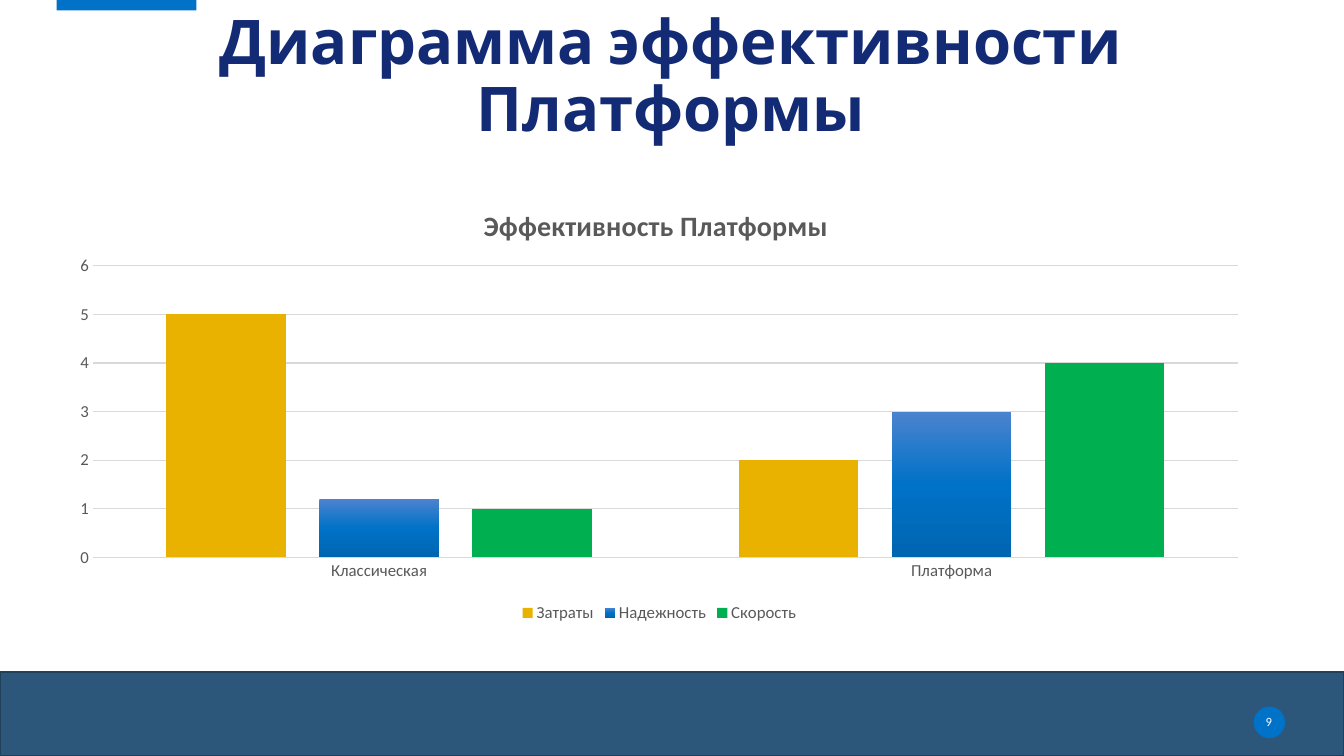
import copy
import dataclasses
import typing

import lxml.etree
import pptx
import pptx.chart.data
import pptx.dml.color
import pptx.enum.chart
import pptx.enum.dml
import pptx.enum.shapes
import pptx.enum.text
import pptx.oxml.ns
import pptx.util

RGB = pptx.dml.color.RGBColor
SHAPE = pptx.enum.shapes.MSO_SHAPE
CHART = pptx.enum.chart
CENTER = pptx.enum.text.PP_ALIGN.CENTER
EMU_PER_PX = 9525

WHITE = RGB(0xFF, 0xFF, 0xFF)
NAVY = RGB(0x13, 0x2A, 0x75)
FOOTER_BLUE = RGB(0x2C, 0x56, 0x7A)
FOOTER_EDGE = RGB(0x21, 0x40, 0x5A)
ACCENT_BLUE = RGB(0x00, 0x72, 0xC7)
LIGHT_BLUE = RGB(0x4B, 0x83, 0xCF)
DEEP_BLUE = RGB(0x00, 0x65, 0xB1)
YELLOW = RGB(0xEA, 0xB2, 0x00)
GREEN = RGB(0x00, 0xB0, 0x50)
TEXT_GRAY = RGB(0x59, 0x59, 0x59)
LINE_GRAY = RGB(0xD9, 0xD9, 0xD9)

Box = tuple[int, int, int, int]


@dataclasses.dataclass(frozen=True)
class Decoration:
    preset: typing.Any
    box: Box
    fill: RGB
    edge: RGB | None = None


@dataclasses.dataclass(frozen=True)
class Measure:
    name: str
    scores: tuple[float, ...]
    colors: tuple[RGB, ...]


DECORATIONS = (
    Decoration(SHAPE.RECTANGLE, (0, 640, 1280, 80), FOOTER_BLUE, FOOTER_EDGE),
    Decoration(SHAPE.RECTANGLE, (54, -2, 133, 12), ACCENT_BLUE),
    Decoration(SHAPE.OVAL, (1194, 673, 30, 30), ACCENT_BLUE),
)
APPROACHES = ("Классическая", "Платформа")
MEASURES = (
    Measure("Затраты", (5, 2), (YELLOW,)),
    Measure("Надежность", (1.2, 3), (LIGHT_BLUE, ACCENT_BLUE, DEEP_BLUE)),
    Measure("Скорость", (1, 4), (GREEN,)),
)
TITLE_FONT = {"name": "Cabin", "size": 44, "bold": True, "color": NAVY}
NUMBER_FONT = {"name": "Calibri", "size": 9, "color": WHITE}
LABEL_FONT = {"name": "Calibri", "size": 12, "bold": False, "color": TEXT_GRAY}
HEADING_FONT = LABEL_FONT | {"size": 20, "bold": True}


def emu(box: Box) -> list[int]:
    return [length * EMU_PER_PX for length in box]


def apply_format(target: typing.Any, values: dict[str, typing.Any]) -> None:
    for attribute, value in values.items():
        setattr(target, attribute, value)


def apply_font(font: typing.Any, values: dict[str, typing.Any]) -> None:
    for attribute, value in values.items():
        if attribute == "color":
            font.color.rgb = value
        else:
            setattr(font, attribute, pptx.util.Pt(value) if attribute == "size" else value)


def apply_line(line: typing.Any, color: RGB, width: float) -> None:
    line.color.rgb = color
    line.width = pptx.util.Pt(width)


def draw_decoration(slide: typing.Any, decoration: Decoration) -> None:
    shape = slide.shapes.add_shape(decoration.preset, *emu(decoration.box))
    shape.shadow.inherit = False
    shape.fill.solid()
    shape.fill.fore_color.rgb = decoration.fill
    if decoration.edge is None:
        shape.line.fill.background()
    else:
        apply_line(shape.line, decoration.edge, 1)


def write_text(frame: typing.Any, text: str, font: dict[str, typing.Any]) -> None:
    apply_format(frame, {
        "word_wrap": True,
        "auto_size": pptx.enum.text.MSO_AUTO_SIZE.NONE,
        "vertical_anchor": pptx.enum.text.MSO_ANCHOR.MIDDLE,
    })
    paragraph = frame.paragraphs[0]
    paragraph.alignment = CENTER
    run = paragraph.add_run()
    run.text = text
    apply_font(run.font, font)


def place_by_fraction(part: typing.Any, index: int, fractions: dict[str, float], inner: bool) -> None:
    qn = pptx.oxml.ns.qn
    for automatic in part.findall(qn("c:layout")):
        part.remove(automatic)
    layout = lxml.etree.Element(qn("c:layout"))
    part.insert(index, layout)
    manual = lxml.etree.SubElement(layout, qn("c:manualLayout"))
    settings = {"layoutTarget": "inner"} if inner else {}
    settings |= {"xMode": "edge", "yMode": "edge"}
    settings |= {key: str(value) for key, value in fractions.items()}
    for tag, value in settings.items():
        lxml.etree.SubElement(manual, qn(f"c:{tag}")).set("val", value)


def fill_columns(columns: typing.Any, colors: tuple[RGB, ...]) -> None:
    columns.invert_if_negative = False
    fill = columns.format.fill
    if len(colors) == 1:
        fill.solid()
        fill.fore_color.rgb = colors[0]
        return
    fill.gradient()
    fill.gradient_angle = 270
    stop_list = columns._element.find(".//" + pptx.oxml.ns.qn("a:gsLst"))
    while len(stop_list) < len(colors):
        stop_list.append(copy.deepcopy(stop_list[0]))
    for index, (stop, color) in enumerate(zip(fill.gradient_stops, colors)):
        stop.position = index / (len(colors) - 1)
        stop.color.rgb = color


def draw_efficiency_chart(slide: typing.Any, box: Box) -> None:
    data = pptx.chart.data.CategoryChartData()
    data.categories = APPROACHES
    for measure in MEASURES:
        data.add_series(measure.name, measure.scores)
    chart = slide.shapes.add_chart(CHART.XL_CHART_TYPE.COLUMN_CLUSTERED, *emu(box), data).chart
    apply_font(chart.font, LABEL_FONT)

    chart.has_title = True
    heading = chart.chart_title.text_frame.paragraphs[0].add_run()
    heading.text = "Эффективность Платформы"
    apply_font(heading.font, HEADING_FONT)
    place_by_fraction(chart.chart_title._element, 1, {"x": 0.35, "y": 0.05}, False)
    plot_area = chart._chartSpace.chart.plotArea
    place_by_fraction(plot_area, 0, {"x": 0.03, "y": 0.195, "w": 0.95, "h": 0.65}, True)

    chart.has_legend = True
    apply_format(chart.legend, {
        "position": CHART.XL_LEGEND_POSITION.BOTTOM,
        "include_in_layout": False,
    })
    apply_font(chart.legend.font, LABEL_FONT)

    plot = chart.plots[0]
    apply_format(plot, {"gap_width": 123, "overlap": -28, "vary_by_categories": False})
    for columns, measure in zip(plot.series, MEASURES):
        fill_columns(columns, measure.colors)

    for axis in (chart.category_axis, chart.value_axis):
        apply_format(axis, {
            "major_tick_mark": CHART.XL_TICK_MARK.NONE,
            "minor_tick_mark": CHART.XL_TICK_MARK.NONE,
        })
        apply_font(axis.tick_labels.font, LABEL_FONT)
    apply_line(chart.category_axis.format.line, LINE_GRAY, 1)
    apply_format(chart.value_axis, {
        "minimum_scale": 0,
        "maximum_scale": 6,
        "major_unit": 1,
        "has_major_gridlines": True,
    })
    chart.value_axis.format.line.fill.background()
    apply_line(chart.value_axis.major_gridlines.format.line, LINE_GRAY, 0.75)


def main() -> None:
    presentation = pptx.Presentation()
    presentation.slide_width = 1280 * EMU_PER_PX
    presentation.slide_height = 720 * EMU_PER_PX
    slide = presentation.slides.add_slide(presentation.slide_layouts[5])
    for decoration in DECORATIONS:
        draw_decoration(slide, decoration)

    title = slide.shapes.title
    apply_format(title, dict(zip(("left", "top", "width", "height"), emu((54, 26, 1170, 97)))))
    write_text(title.text_frame, "Диаграмма эффективности Платформы", TITLE_FONT)
    title.text_frame.paragraphs[0].line_spacing = 0.9

    page_number = slide.shapes.add_textbox(*emu((1193, 678, 31, 19))).text_frame
    apply_format(page_number, dict.fromkeys(
        ("margin_left", "margin_top", "margin_right", "margin_bottom"), 0))
    write_text(page_number, "9", NUMBER_FONT)

    draw_efficiency_chart(slide, (54, 170, 1148, 427))
    presentation.save("out.pptx")


if __name__ == "__main__":
    main()
